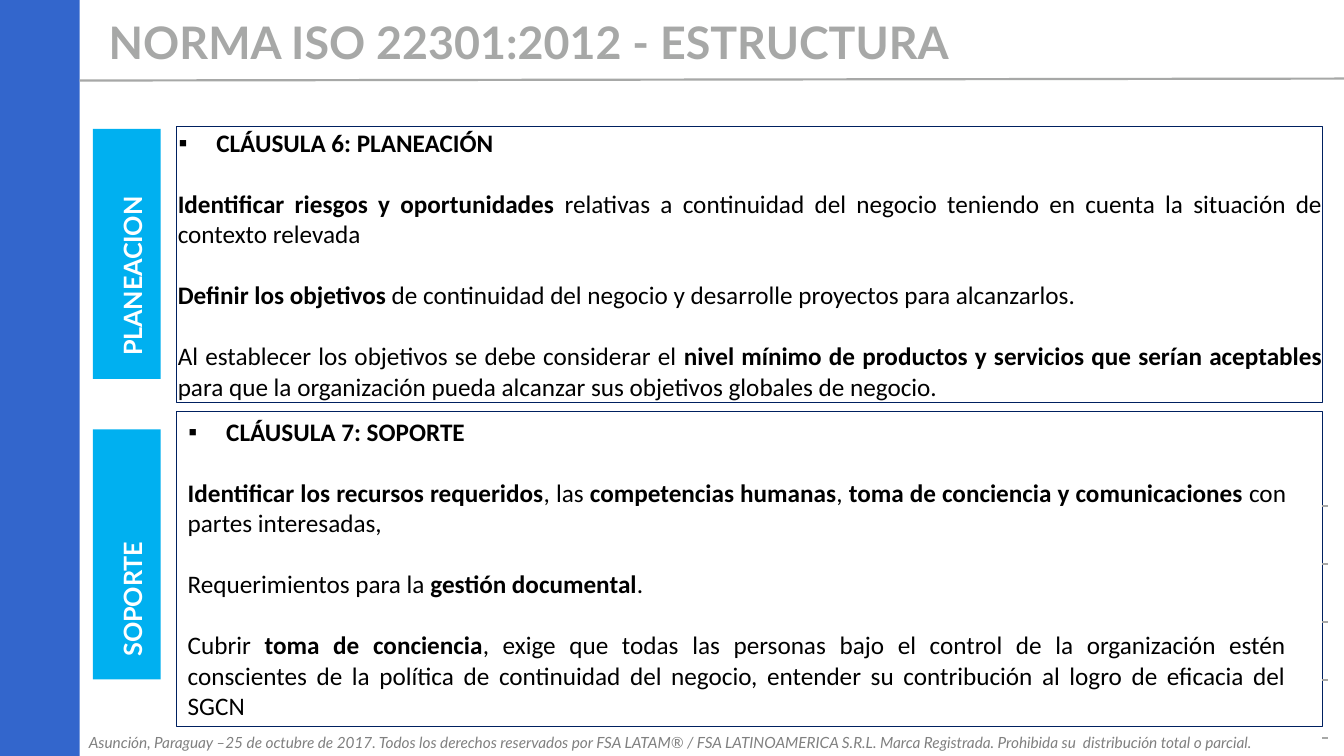
from lxml import etree
from pptx import Presentation
from pptx.dml.color import RGBColor
from pptx.enum import shapes, text
from pptx.oxml.ns import qn
from pptx.util import Cm, Pt

BLUE, CYAN, NAVY, GREY = "3366CC", "00B0F0", "002060", "A7A8A7"
PANEL_LEFT, PANEL_WIDTH = 4.45, 28.88

# Asterisks enclose bold text
PLANNING = [
    "*CLÁUSULA 6: PLANEACIÓN*",
    "*Identificar riesgos y oportunidades* relativas a continuidad del negocio "
    "teniendo en cuenta la situación de contexto relevada",
    "*Definir los objetivos* de continuidad del negocio y desarrolle proyectos "
    "para alcanzarlos.",
    "Al establecer los objetivos se debe considerar el *nivel mínimo de productos "
    "y servicios que serían aceptables* para que la organización pueda alcanzar "
    "sus objetivos globales de negocio.",
]
SUPPORT = [
    "*CLÁUSULA 7: SOPORTE*",
    "*Identificar los recursos requeridos*, las *competencias humanas*, "
    "*toma de conciencia y comunicaciones* con partes interesadas,",
    "Requerimientos para la *gestión documental*.",
    "Cubrir *toma de conciencia*, exige que todas las personas bajo el control de "
    "la organización estén conscientes de la política de continuidad del negocio, "
    "entender su contribución al logro de eficacia del SGCN",
]
FOOTER = ("Asunción, Paraguay –25 de octubre de 2017. Todos los derechos reservados "
          "por FSA LATAM® / FSA LATINOAMERICA S.R.L. Marca Registrada. Prohibida "
          "su  distribución total o parcial.")


def rgb(value):
    return RGBColor.from_string(value)


def place(sp, left, top, width, height):
    sp.left, sp.top, sp.width, sp.height = Cm(left), Cm(top), Cm(width), Cm(height)


def set_frame(tf, insets=(0, 0, 0, 0), wrap=True):
    tf.margin_left, tf.margin_top, tf.margin_right, tf.margin_bottom = map(Cm, insets)
    tf.word_wrap = wrap
    tf.auto_size = text.MSO_AUTO_SIZE.NONE
    tf.vertical_anchor = text.MSO_ANCHOR.TOP


def style_run(r, size, color, font, bold=False, italic=False, spacing=0):
    r.font.size, r.font.name = Pt(size), font
    r.font.bold, r.font.italic = bold, italic
    r.font.color.rgb = rgb(color)
    if spacing:
        r._r.get_or_add_rPr().set("spc", str(spacing))


def add_bar(slide, left, top, width, height, color):
    sp = slide.shapes.add_shape(shapes.MSO_SHAPE.RECTANGLE, Cm(left), Cm(top),
                                Cm(width), Cm(height))
    sp.shadow.inherit = False
    sp.fill.solid()
    sp.fill.fore_color.rgb = rgb(color)
    sp.line.fill.background()


def add_line(slide, x1, y1, x2, y2, width):
    line = slide.shapes.add_connector(shapes.MSO_CONNECTOR.STRAIGHT, Cm(x1), Cm(y1),
                                      Cm(x2), Cm(y2))
    line.line.color.rgb = rgb(GREY)
    line.line.width = Pt(width)
    etree.SubElement(line._element.spPr, qn("a:effectLst"))


def add_text(slide, left, top, width, height, content, vertical=False, **style):
    sp = slide.shapes.add_textbox(Cm(left), Cm(top), Cm(width), Cm(height))
    tf = sp.text_frame
    set_frame(tf, wrap=not vertical)
    if vertical:
        tf._txBody.bodyPr.set("vert", "vert270")
    tf.text = content
    style_run(tf.paragraphs[0].runs[0], **style)


def add_side_label(slide, top, content):
    add_bar(slide, 2.34, top, 1.71, 6.3, CYAN)
    add_text(slide, 2.95, top, 0.76, 5.72, content, vertical=True,
             size=18, color="FFFFFF", font="Lato", bold=True, spacing=-10)


def set_bullet(p, char=None):
    pPr = p._p.get_or_add_pPr()
    pPr.set("marL", str(Cm(1) if char else Cm(0.03)))
    pPr.set("indent", str(Cm(-0.95) if char else 0))
    if char:
        etree.SubElement(pPr, qn("a:buFont"), typeface="Arial")
        etree.SubElement(pPr, qn("a:buChar"), char=char)
    else:
        etree.SubElement(pPr, qn("a:buNone"))


def fill_panel(sp, top, height, insets, paragraphs):
    place(sp, PANEL_LEFT, top, PANEL_WIDTH, height)
    sp.line.color.rgb = rgb(NAVY)
    sp.line.width = Pt(0.75)
    tf = sp.text_frame
    set_frame(tf, insets)
    for i, content in enumerate(paragraphs):
        p = tf.add_paragraph() if i else tf.paragraphs[0]
        set_bullet(p, None if i else "▪")
        p.alignment = text.PP_ALIGN.JUSTIFY
        p.space_before = Pt(22 if i else 0)
        for j, part in enumerate(content.split("*")):
            if part:
                r = p.add_run()
                r.text = part
                style_run(r, 18, "000000", "Calibri", bold=j % 2 == 1)


def set_title(sp, content):
    place(sp, 2.74, 0.37, 27.18, 1.4)
    set_frame(sp.text_frame)
    sp.text_frame.text = content
    p = sp.text_frame.paragraphs[0]
    p.alignment = text.PP_ALIGN.LEFT
    style_run(p.runs[0], 32, GREY, "Lato", bold=True)


def main():
    prs = Presentation()
    prs.slide_width, prs.slide_height = Cm(33.87), Cm(19.05)
    slide = prs.slides.add_slide(prs.slide_layouts[3])
    title, planning, support = slide.placeholders

    # Side band and heading
    add_bar(slide, 0, 0, 2.01, 19.05, BLUE)
    add_line(slide, 33.87, 1.98, 2.01, 2.03, 1.56)
    set_title(title, "NORMA ISO 22301:2012 - ESTRUCTURA")

    # Clause panels and their side labels
    fill_panel(planning, 3.18, 6.96, (0, 0.03, 0, 0), PLANNING)
    fill_panel(support, 10.36, 7.95, (0.25, 0.13, 0.92, 0.13), SUPPORT)
    add_side_label(slide, 3.25, "PLANEACION")
    add_side_label(slide, 10.82, "SOPORTE")

    # Tick marks at the right edge
    for i in range(5):
        y = 12.75 + 1.46 * i
        add_line(slide, 33.32, y, 33.46, y, 1.17)

    # Footer
    add_text(slide, 2.24, 18.48, 31.45, 0.5, FOOTER, size=11, color="808080",
             font="Lato", italic=True, spacing=-5)
    prs.save("out.pptx")


if __name__ == "__main__":
    main()
